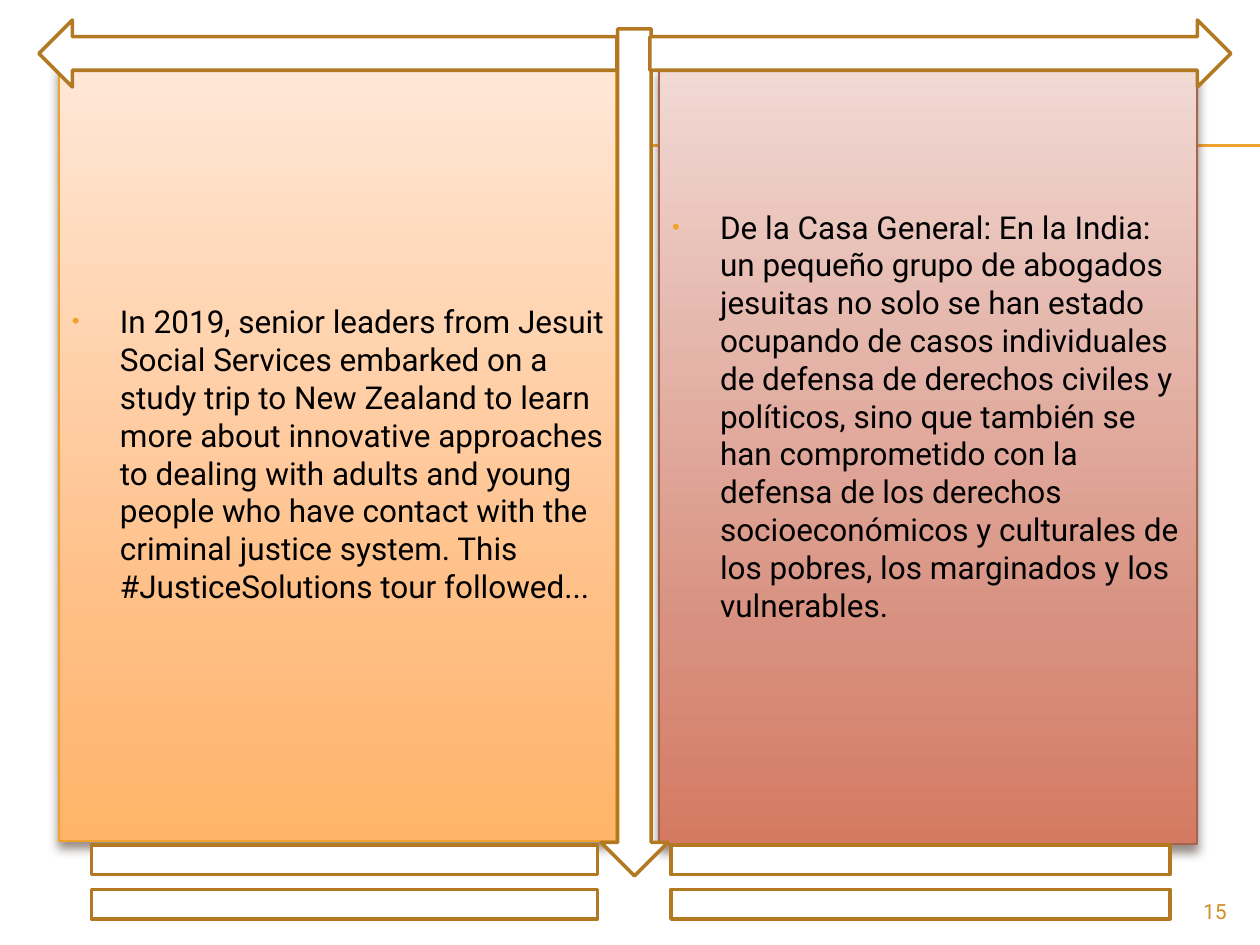
from copy import deepcopy
from typing import NamedTuple

from lxml import etree
from pptx import Presentation
from pptx.dml.color import RGBColor
from pptx.enum import shapes, text
from pptx.oxml.ns import qn
from pptx.util import Emu, Pt

SCALE = 914400 / 126
FONT = "Roboto"
GOLD = RGBColor(0xF0, 0xA2, 0x2E)
BROWN = RGBColor(0xB2, 0x78, 0x22)
OCHRE = RGBColor(0xD4, 0x8F, 0x29)
RUST = RGBColor(0xA5, 0x64, 0x4E)
SHADE = RGBColor(0x4E, 0x3B, 0x30)
WHITE = RGBColor(0xFF, 0xFF, 0xFF)
BLACK = RGBColor(0, 0, 0)
PEACH = (RGBColor(0xFF, 0xE7, 0xD7), RGBColor(0xFF, 0xBE, 0x84),
         RGBColor(0xFF, 0xB4, 0x68))
CORAL = (RGBColor(0xF1, 0xD9, 0xD4), RGBColor(0xD8, 0x91, 0x80),
         RGBColor(0xD4, 0x7A, 0x62))
STOPS = (0, 0.72, 1)
KIND = shapes.MSO_SHAPE


class Box(NamedTuple):
    x: int
    y: int
    w: int
    h: int


class Card(NamedTuple):
    box: Box
    shades: tuple
    edge: RGBColor
    foot: int
    words: str


class Mark(NamedTuple):
    kind: KIND
    box: Box


CARDS = (
    Card(Box(59, 66, 557, 775), PEACH, GOLD, 6,
         "In 2019, senior leaders from Jesuit Social Services embarked on a "
         "study trip to New Zealand to learn more about innovative approaches "
         "to dealing with adults and young people who have contact with the "
         "criminal justice system. This #JusticeSolutions tour followed..."),
    Card(Box(659, 69, 538, 775), CORAL, RUST, 88,
         "De la Casa General: En la India: un pequeño grupo de abogados "
         "jesuitas no solo se han estado ocupando de casos individuales de "
         "defensa de derechos civiles y políticos, sino que también se han "
         "comprometido con la defensa de los derechos socioeconómicos y "
         "culturales de los pobres, los marginados y los vulnerables."),
)
MARKS = (
    Mark(KIND.DOWN_ARROW, Box(601, 29, 67, 847)),
    Mark(KIND.RIGHT_ARROW, Box(650, 20, 581, 67)),
    Mark(KIND.LEFT_ARROW, Box(39, 20, 578, 67)),
    Mark(KIND.MATH_EQUAL, Box(0, 819, 689, 126)),
    Mark(KIND.MATH_EQUAL, Box(581, 819, 679, 126)),
)


def px(n: int) -> Emu:
    return Emu(round(n * SCALE))


def place(box: Box) -> list:
    return [px(n) for n in box]


def put(item, **values) -> None:
    for name, value in values.items():
        setattr(item, name, value)


def node(parent, tag: str, **values):
    return etree.SubElement(parent, qn(tag), values)


def rule(slide, y: int) -> None:
    line = slide.shapes.add_connector(
        shapes.MSO_CONNECTOR.STRAIGHT, px(71), px(y), px(1260), px(y))
    line.line.color.rgb = GOLD
    line.line.width = Pt(0.75)
    node(line._element.spPr, "a:effectLst")


def outline(slide, kind: KIND, box: Box, edge: RGBColor, width: float):
    shape = slide.shapes.add_shape(kind, *place(box))
    shape.shadow.inherit = False
    shape.line.color.rgb = edge
    shape.line.width = Pt(width)
    return shape


def blend(fill, shades: tuple) -> None:
    """Fill from top to bottom through three shades."""
    fill.gradient()
    fill.gradient_angle = 270
    first = fill.gradient_stops[0]._gs
    first.addnext(deepcopy(first))
    for stop, pos, shade in zip(fill.gradient_stops, STOPS, shades):
        stop.position = pos
        stop.color.rgb = shade


def shadow(shape) -> None:
    drop = node(shape._element.spPr.find(qn("a:effectLst")), "a:outerShdw",
                blurRad=str(Pt(6)), dist=str(Pt(4)), dir="5400000",
                rotWithShape="0")
    tint = node(drop, "a:srgbClr", val=str(SHADE))
    node(tint, "a:alpha", val="60000")


def bullet(para) -> None:
    props = para._p.get_or_add_pPr()
    put_in = str(px(48))
    props.set("marL", put_in)
    props.set("indent", "-" + put_in)
    node(node(props, "a:buClr"), "a:srgbClr", val=str(GOLD))
    node(props, "a:buSzPct", val="70000")
    node(props, "a:buFont", typeface="Arial")
    node(props, "a:buChar", char="•")


def write(para, words: str, size: int, color: RGBColor) -> None:
    run = para.add_run()
    run.text = words
    put(run.font, name=FONT, size=Pt(size))
    run.font.color.rgb = color


def card(slide, item: Card) -> None:
    shape = outline(slide, KIND.RECTANGLE, item.box, item.edge, 0.79)
    blend(shape.fill, item.shades)
    shadow(shape)
    frame = shape.text_frame
    put(frame, word_wrap=True, vertical_anchor=text.MSO_ANCHOR.MIDDLE,
        margin_left=px(13), margin_right=px(10),
        margin_top=px(6), margin_bottom=px(item.foot))
    para = frame.paragraphs[0]
    para.alignment = text.PP_ALIGN.LEFT
    bullet(para)
    write(para, item.words, 18, BLACK)


def mark(slide, item: Mark) -> None:
    shape = outline(slide, item.kind, item.box, BROWN, 2)
    shape.fill.solid()
    shape.fill.fore_color.rgb = WHITE


def number(slide, words: str) -> None:
    frame = slide.shapes.add_textbox(
        *place(Box(1134, 892, 105, 34))).text_frame
    frame.word_wrap = True
    para = frame.paragraphs[0]
    para.alignment = text.PP_ALIGN.RIGHT
    write(para, words, 12, OCHRE)


def main() -> None:
    deck = Presentation()
    put(deck, slide_width=px(1260), slide_height=px(945))
    slide = deck.slides.add_slide(deck.slide_layouts[6])
    for y in (145, 146):
        rule(slide, y)
    for item in CARDS:
        card(slide, item)
    for item in MARKS:
        mark(slide, item)
    number(slide, "15")
    deck.save("out.pptx")


if __name__ == "__main__":
    main()
